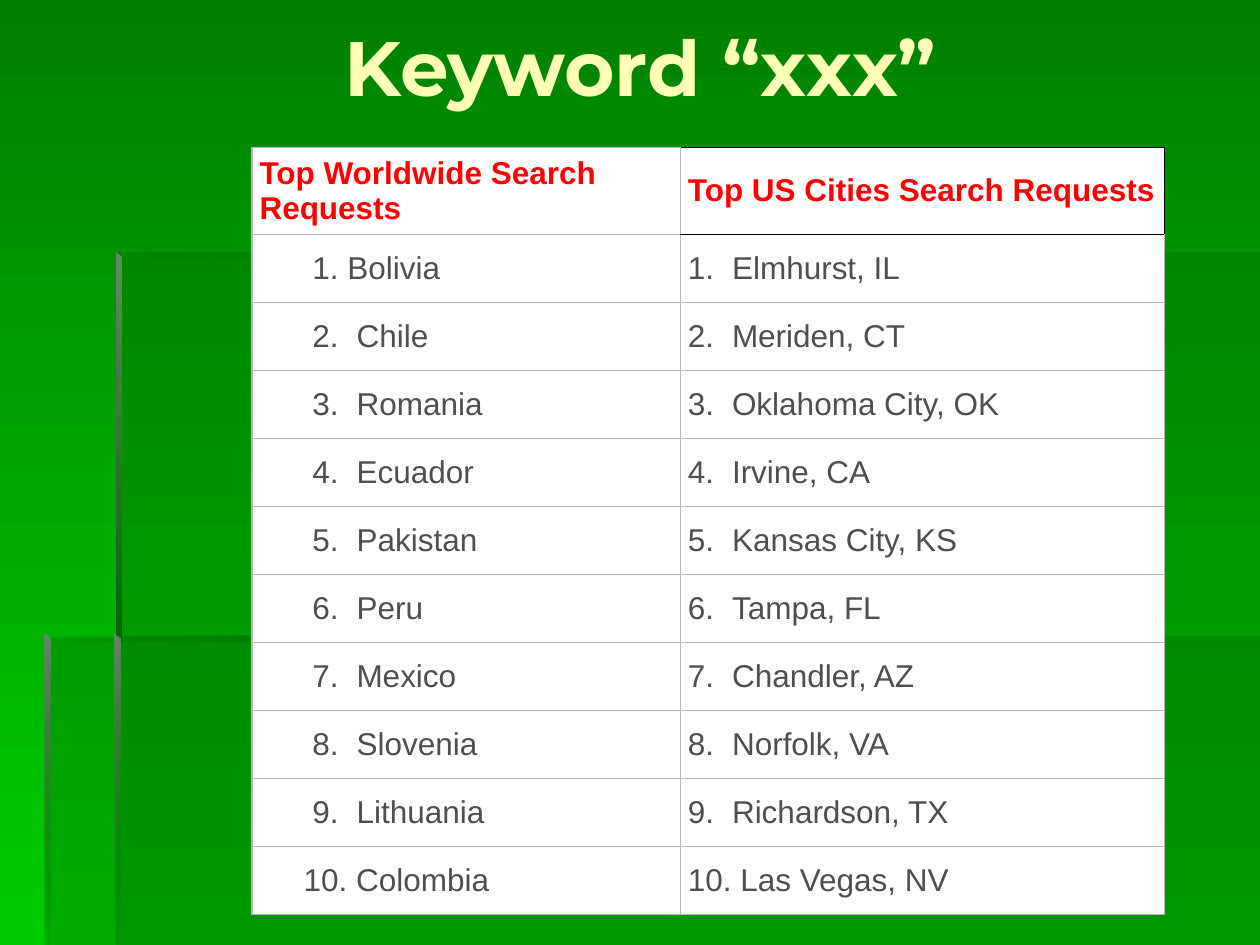
from lxml.etree import SubElement
from pptx import Presentation
from pptx.dml.color import RGBColor
from pptx.enum.text import MSO_ANCHOR, PP_ALIGN
from pptx.oxml.ns import qn
from pptx.util import Inches, Pt

COLORS = {
    "dark": "008000", "bright": "00CC00", "panel": "006600",
    "edge": "005E00", "bevel": "668666", "title": "FFFFB7",
    "header": "FF0000", "text": "4F4F4F", "cell": "FFFFFF",
    "grid": "B9B9B9", "black": "000000",
}
HEADERS = ["Top Worldwide Search Requests", "Top US Cities Search Requests"]
COUNTRIES = ["Bolivia", "Chile", "Romania", "Ecuador", "Pakistan",
             "Peru", "Mexico", "Slovenia", "Lithuania", "Colombia"]
CITIES = ["Elmhurst, IL", "Meriden, CT", "Oklahoma City, OK", "Irvine, CA",
          "Kansas City, KS", "Tampa, FL", "Chandler, AZ", "Norfolk, VA",
          "Richardson, TX", "Las Vegas, NV"]
NUMBER_INDENTS = [0.42, 0]  # per column, from the cell's text edge
HANGING = 0.35              # from number to name


def rgb(name):
    return RGBColor.from_string(COLORS[name])


def set_gradient(fill, names, angle):
    """Two-stop gradient; the angle runs clockwise."""
    fill.gradient()
    fill.gradient_angle = -angle % 360
    for position, (stop, name) in enumerate(zip(fill.gradient_stops, names)):
        stop.position = position
        stop.color.rgb = rgb(name)


def set_opacity(shape, opacities):
    colors = list(shape.element.spPr.iter(qn("a:srgbClr")))
    for color, opacity in zip(colors, opacities):
        if opacity < 100:
            SubElement(color, qn("a:alpha"), val=str(opacity * 1000))


def add_outline(slide, points):
    corners = [(Inches(x), Inches(y)) for x, y in points]
    builder = slide.shapes.build_freeform(*corners[0], scale=1.0)
    builder.add_line_segments(corners[1:], close=True)
    shape = builder.convert_to_shape()
    shape.shadow.inherit = False
    shape.line.fill.background()
    return shape


def add_panel(slide, points):
    shape = add_outline(slide, points)
    shape.fill.solid()
    shape.fill.fore_color.rgb = rgb("panel")
    set_opacity(shape, [30])


def add_bevel(slide, points, names, opacities, angle):
    shape = add_outline(slide, points)
    set_gradient(shape.fill, names, angle)
    set_opacity(shape, opacities)


def add_backdrop(slide):
    set_gradient(slide.background.fill, ["dark", "bright"], 90)
    # Translucent panels
    add_panel(slide, [(0.92, 5.05), (0.92, 7.5), (10, 7.5), (10, 5.05)])
    add_panel(slide, [(0.94, 5.06), (0.36, 5.06), (0.36, 7.5),
                      (10, 7.5), (10, 2), (0.94, 2)])
    # Top edges
    for left, top, right in [(0.92, 2, 8.91), (0.35, 5.04, 5.35)]:
        add_bevel(slide, [(left, top), (left, top + 0.05),
                          (right, top + 0.05), (right, top)],
                  ["panel", "edge"], [0, 100], 0)
    # Left edges
    for left, top, bottom, opacity in [(0.92, 2, 5.1, 100),
                                       (0.91, 5.04, 7.5, 0),
                                       (0.35, 5.04, 7.5, 10)]:
        add_bevel(slide, [(left, top), (left, bottom),
                          (left + 0.05, bottom), (left + 0.05, top + 0.04)],
                  ["bevel", "panel"], [100, opacity], 90)


def add_text(paragraph, text, font, size, color, bold):
    run = paragraph.add_run()
    run.text = text
    run.font.name = font
    run.font.size = Pt(size)
    run.font.bold = bold
    run.font.color.rgb = rgb(color)


def format_title(title):
    title.left, title.top = Inches(0.5), Inches(0.17)
    title.width, title.height = Inches(9.17), Inches(1.4)
    frame = title.text_frame
    frame.vertical_anchor = MSO_ANCHOR.MIDDLE
    frame.margin_bottom = Inches(0.75)
    paragraph = frame.paragraphs[0]
    paragraph.alignment = PP_ALIGN.CENTER
    add_text(paragraph, "Keyword “xxx”", "Montserrat", 44, "title", True)


def set_borders(cell, colors):
    """Colours are in the order left, right, top, bottom."""
    properties = cell._tc.get_or_add_tcPr()
    for index, (side, color) in enumerate(zip("LRTB", colors)):
        line = properties.makeelement(qn(f"a:ln{side}"), {"w": str(Pt(0.75))})
        fill = SubElement(line, qn("a:solidFill"))
        SubElement(fill, qn("a:srgbClr"), val=COLORS[color])
        properties.insert(index, line)


def fill_cell(cell, text, color, bold):
    cell.fill.solid()
    cell.fill.fore_color.rgb = rgb("cell")
    cell.vertical_anchor = MSO_ANCHOR.MIDDLE
    cell.margin_left = Inches(0.06)
    cell.margin_right = cell.margin_top = cell.margin_bottom = Inches(0.03)
    paragraph = cell.text_frame.paragraphs[0]
    add_text(paragraph, text, "Arial", 18, color, bold)
    return paragraph


def fill_entry(cell, number, name, column):
    # Two-digit numbers and the first country sit closer to their names
    tight = number == 10 or name == COUNTRIES[0]
    gap = " " if tight else "\t"
    paragraph = fill_cell(cell, f"{number}.{gap}{name}", "text", False)
    start = NUMBER_INDENTS[column]
    if number == 10 and start:
        start -= 0.07
    properties = paragraph._p.get_or_add_pPr()
    properties.set("marL", str(Inches(start + HANGING)))
    properties.set("indent", str(-Inches(HANGING)))


def add_ranking(slide):
    table = slide.shapes.add_table(
        11, 2, Inches(2), Inches(1.17), Inches(7.24), Inches(6.06)).table
    table.first_row = table.horz_banding = False
    for column, width in zip(table.columns, [3.4, 3.84]):
        column.width = Inches(width)
    for index, row in enumerate(table.rows):
        row.height = Inches(0.54 if index else 0.69)

    for column, names in enumerate([COUNTRIES, CITIES]):
        fill_cell(table.cell(0, column), HEADERS[column], "header", True)
        for number, name in enumerate(names, 1):
            fill_entry(table.cell(number, column), number, name, column)

    # Grey grid, with a black frame on the second header
    special = {(0, 1): ["grid", "black", "black", "black"],
               (1, 1): ["grid", "grid", "black", "grid"]}
    for row in range(11):
        for column in range(2):
            set_borders(table.cell(row, column),
                        special.get((row, column), ["grid"] * 4))


def main():
    presentation = Presentation()
    presentation.slide_width = Inches(10)
    presentation.slide_height = Inches(7.5)
    slide = presentation.slides.add_slide(presentation.slide_layouts[5])
    add_backdrop(slide)
    format_title(slide.shapes.title)
    add_ranking(slide)
    presentation.save("out.pptx")


if __name__ == "__main__":
    main()
